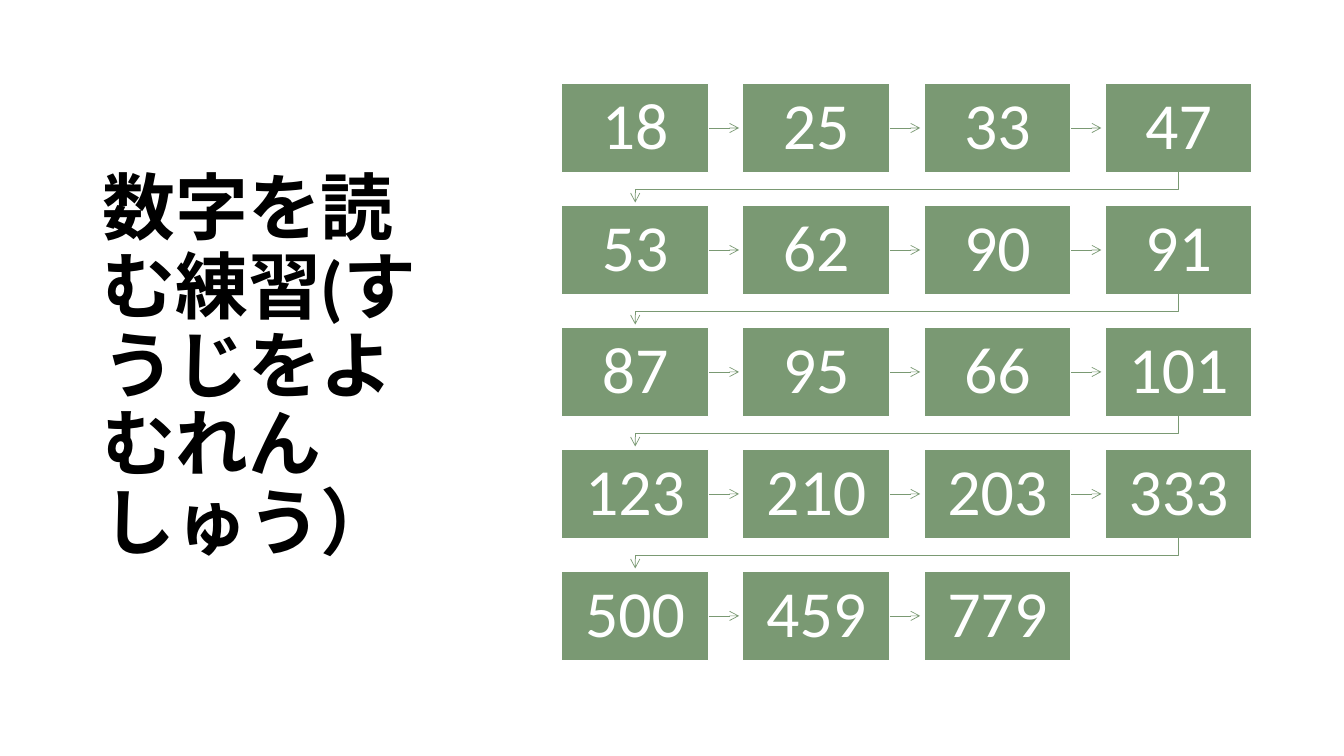
import pptx
import pptx.dml.color
import pptx.enum.lang
import pptx.enum.shapes
import pptx.enum.text
import pptx.oxml.ns
import pptx.util
from lxml import etree
from pptx.util import Inches

GREEN, WHITE, BLACK = "7A9973", "FFFFFF", "000000"
FONT = "Calibri"
TITLE = "数字を読む練習(すうじをよむれんしゅう）"
NUMBERS = [18, 25, 33, 47, 53, 62, 90, 91, 87, 95,
           66, 101, 123, 210, 203, 333, 500, 459, 779]

# Grid of number boxes, in inches
COLUMNS = 4
LEFT, LAST_LEFT, TOP = 5.57, 10.96, 0.83
BOX_WIDTH, BOX_HEIGHT = 1.46, 0.88
COLUMN_STEP = (LAST_LEFT - LEFT) / (COLUMNS - 1)
ROW_STEP = 1.21
ARROW_LENGTH = 0.3


def color(value):
    return pptx.dml.color.RGBColor.from_string(value)


def set_text(shape, text, size, text_color, bold=False):
    frame = shape.text_frame
    frame.text = text
    frame.word_wrap = True
    frame.vertical_anchor = pptx.enum.text.MSO_ANCHOR.MIDDLE
    para = frame.paragraphs[0]
    para.line_spacing = 0.9
    font = para.runs[0].font
    font.name = FONT
    font.size = pptx.util.Pt(size)
    font.bold = bold
    font.color.rgb = color(text_color)
    return para


def add_title(slide):
    box = slide.shapes.add_textbox(Inches(0.92), Inches(0.61), Inches(3.69), Inches(6.09))
    para = set_text(box, TITLE, 52, BLACK, bold=True)
    para.runs[0].font.language_id = pptx.enum.lang.MSO_LANGUAGE_ID.JAPANESE


def add_number_box(slide, number, left, top):
    box = slide.shapes.add_shape(
        pptx.enum.shapes.MSO_SHAPE.RECTANGLE,
        Inches(left), Inches(top), Inches(BOX_WIDTH), Inches(BOX_HEIGHT))
    box.shadow.inherit = False
    box.fill.solid()
    box.fill.fore_color.rgb = color(GREEN)
    box.line.color.rgb = color(WHITE)
    box.line.width = pptx.util.Pt(1)
    para = set_text(box, str(number), 47, WHITE)
    para.alignment = pptx.enum.text.PP_ALIGN.CENTER
    frame = box.text_frame
    frame.margin_left = frame.margin_right = Inches(0.07)
    frame.margin_top = frame.margin_bottom = Inches(0.08)
    return box


def style_arrow(arrow):
    arrow.line.color.rgb = color(GREEN)
    arrow.line.width = pptx.util.Pt(0.5)
    line = arrow.line._get_or_add_ln()
    etree.SubElement(line, pptx.oxml.ns.qn("a:tailEnd"), type="arrow")


def add_arrow_right(slide, box, left, top):
    start, middle = left + BOX_WIDTH, top + BOX_HEIGHT / 2
    arrow = slide.shapes.add_connector(
        pptx.enum.shapes.MSO_CONNECTOR.STRAIGHT,
        Inches(start), Inches(middle), Inches(start + ARROW_LENGTH), Inches(middle))
    arrow.begin_connect(box, 3)
    style_arrow(arrow)
    etree.SubElement(arrow._element.spPr, pptx.oxml.ns.qn("a:effectLst"))


def add_arrow_to_next_row(slide, left, top):
    start_x, end_x = left + BOX_WIDTH / 2, LEFT + BOX_WIDTH / 2
    start_y = top + BOX_HEIGHT
    turn_y, end_y = start_y + 0.17, start_y + ARROW_LENGTH
    builder = slide.shapes.build_freeform(Inches(start_x), Inches(start_y))
    corners = [(start_x, turn_y), (end_x, turn_y), (end_x, end_y)]
    builder.add_line_segments([(Inches(x), Inches(y)) for x, y in corners], close=False)
    arrow = builder.convert_to_shape()
    arrow.fill.background()
    arrow.shadow.inherit = False
    style_arrow(arrow)


def main():
    deck = pptx.Presentation()
    deck.slide_width, deck.slide_height = Inches(13.33), Inches(7.5)
    slide = deck.slides.add_slide(deck.slide_layouts[6])
    add_title(slide)

    # Numbers run row by row, each with an arrow to the next one
    for index, number in enumerate(NUMBERS):
        row, column = divmod(index, COLUMNS)
        left, top = LEFT + column * COLUMN_STEP, TOP + row * ROW_STEP
        box = add_number_box(slide, number, left, top)
        if index == len(NUMBERS) - 1:
            continue
        if column < COLUMNS - 1:
            add_arrow_right(slide, box, left, top)
        else:
            add_arrow_to_next_row(slide, left, top)

    deck.save("out.pptx")


if __name__ == "__main__":
    main()
